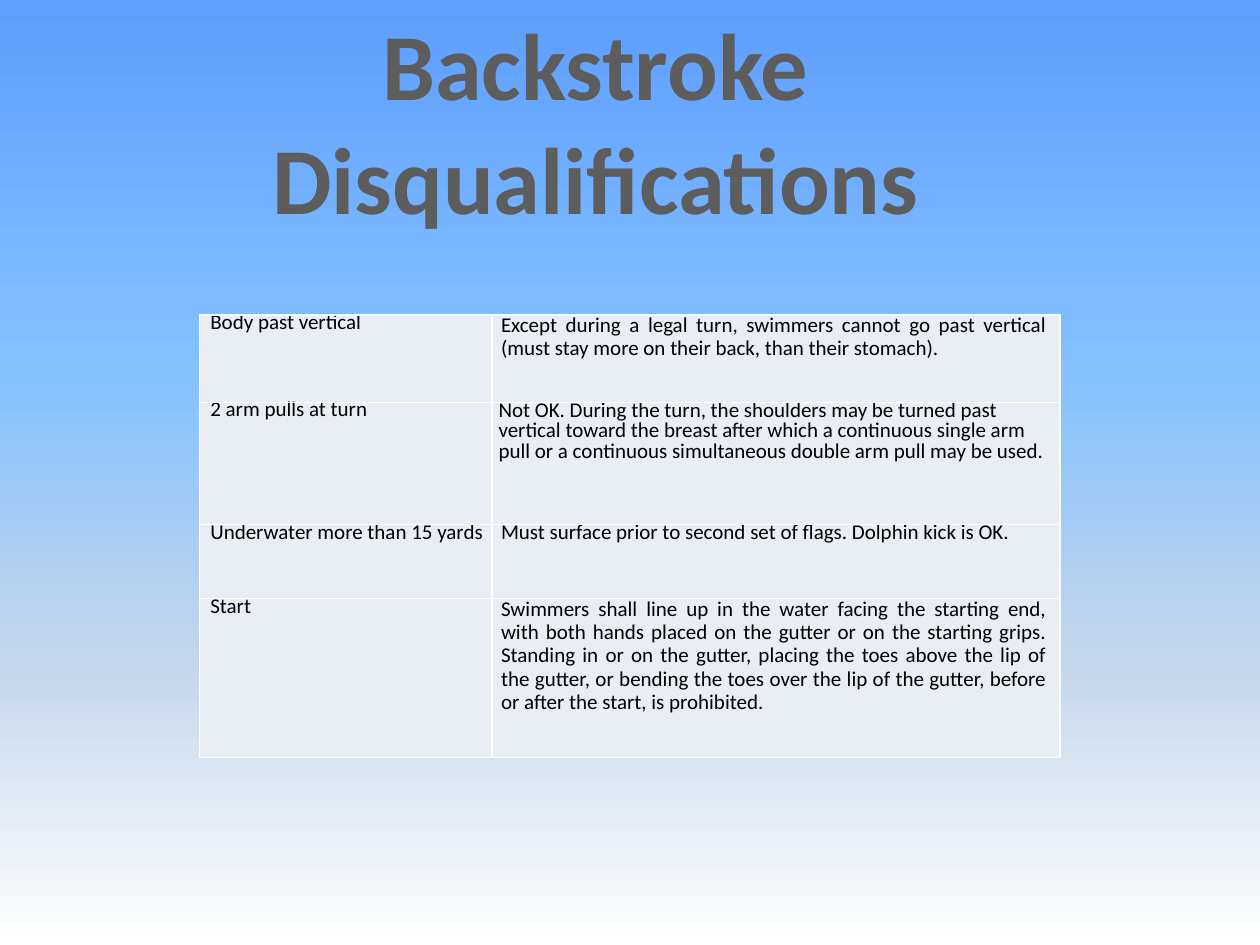
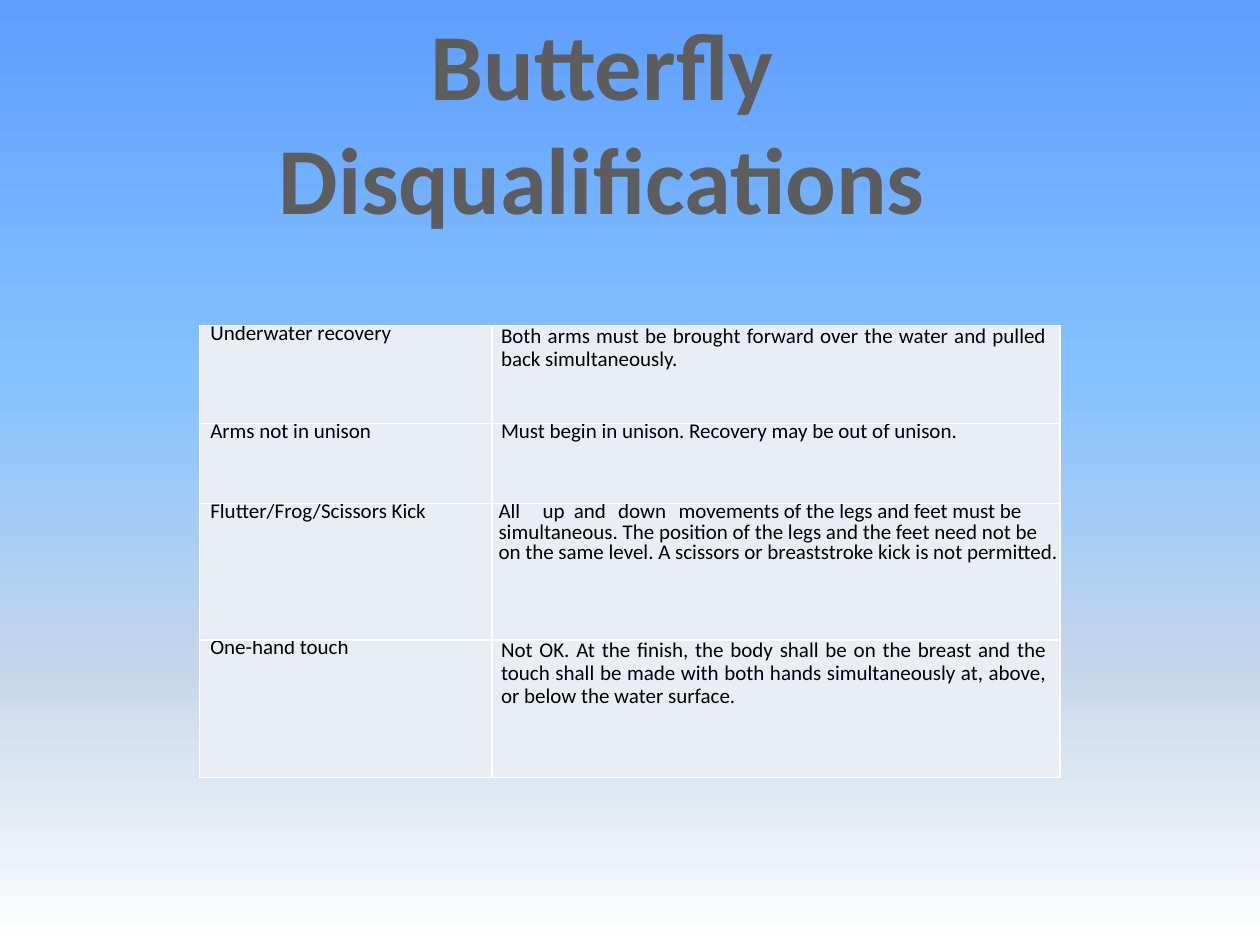
"""Build two slides of swimming stroke disqualifications."""
import dataclasses

import pptx
import pptx.dml.color
import pptx.enum.text
import pptx.oxml
import pptx.oxml.ns
import pptx.util
from pptx.util import Cm, Pt

ALIGN = pptx.enum.text.PP_ALIGN
JUSTIFIED = dict(align=ALIGN.JUSTIFY, indent=0.18)
SINGLE = dict(line=11.8, indent=0.18)
TIGHT = dict(line=11.8, indent=0.13)

STROKES = [
    dict(
        title=["Backstroke", "Disqualifications"], title_left=5.16, table_top=6.35,
        rows=[
            (1.76, "Body past vertical", dict(line=11.6, before=1.6, after=19.9),
             "Except during a legal turn, swimmers cannot go past vertical (must stay more "
             "on their back, than their stomach).",
             dict(JUSTIFIED, line=13.3, after=6.5)),
            (2.46, "2 arm pulls at turn", dict(line=11.6, after=33.4),
             "Not OK. During the turn, the shoulders may be turned past vertical toward the "
             "breast after which a continuous single arm pull or a continuous simultaneous "
             "double arm pull may be used.", TIGHT),
            (1.5, "Underwater more than 15 yards", dict(line=11.8, after=6.5),
             "Must surface prior to second set of flags. Dolphin kick is OK.",
             dict(SINGLE, after=6.7)),
            (3.2, "Start", dict(line=11.5, after=47.4),
             "Swimmers shall line up in the water facing the starting end, with both hands "
             "placed on the gutter or on the starting grips. Standing in or on the gutter, "
             "placing the toes above the lip of the gutter, or bending the toes over the lip "
             "of the gutter, before or after the start, is prohibited.",
             dict(JUSTIFIED, line=13.3, after=7)),
        ],
    ),
    dict(
        title=["Butterfly", "Disqualifications"], title_left=5.29, table_top=6.56,
        rows=[
            (1.98, "Underwater recovery", dict(line=11.6, before=1.9, after=20.1),
             "Both arms must be brought forward over the water and pulled back "
             "simultaneously.", dict(JUSTIFIED, line=13.4, after=6.7)),
            (1.61, "Arms not in unison", dict(line=11.5, after=7.1),
             "Must begin in unison. Recovery may be out of unison.",
             dict(SINGLE, after=6.9)),
            (2.75, "Flutter/Frog/Scissors Kick", dict(line=11.8, after=33.8),
             "All\tup\tand\tdown\tmovements of the legs and feet must be simultaneous. The "
             "position of the legs and the feet need not be on the same level. A scissors or "
             "breaststroke kick is not permitted.",
             dict(TIGHT, tabs=(0.89, 1.52, 2.41, 3.63))),
            (2.77, "One-hand touch", dict(line=11.5, after=34.1),
             "Not OK. At the finish, the body shall be on the breast and the touch shall be "
             "made with both hands simultaneously at, above, or below the water surface.",
             dict(JUSTIFIED, line=13.2, after=7.2)),
        ],
    ),
]


@dataclasses.dataclass(frozen=True)
class Theme:
    font: str = "Calibri"
    title_size: int = 54
    body_size: int = 12
    ink: str = "000000"
    cell: str = "E9EDF4"
    line: str = "FFFFFF"
    border_width: float = 1
    outline_width: float = 1.4
    sky: tuple = ((0, "5E9EFF"), (40, "85C2FF"), (70, "C4D6EB"), (100, "FFFFFF"))
    steel: tuple = ((0, "555555"), (49, "5D5D5D"), (50, "000000"),
                    (95, "000000"), (100, "000000"))


THEME = Theme()
SLIDE_SIZE = (25.4, 19.05)
TITLE_SIZE = (13.69, 4.88)
TABLE_LEFT = 4.02
COLUMNS = (5.9, 11.45)
FAULT_INDENT = 0.22
JUSTIFIED_RIGHT = 0.27


def element(markup):
    """Parse a DrawingML fragment."""
    head, rest = markup.split(">", 1)
    return pptx.oxml.parse_xml(f"{head} {pptx.oxml.ns.nsdecls('a')}>{rest}")


def line_element(tag, width):
    """Return a solid line in the theme's line colour."""
    return element(f'<a:{tag} w="{int(Pt(width))}"><a:solidFill>'
                   f'<a:srgbClr val="{THEME.line}"/></a:solidFill></a:{tag}>')


def set_gradient(fill, owner, stops):
    """Give a fill a downward gradient with the given stops."""
    fill.gradient()
    old = next(owner.iter(pptx.oxml.ns.qn("a:gradFill")))
    marks = "".join(f'<a:gs pos="{place * 1000}"><a:srgbClr val="{color}"/></a:gs>'
                    for place, color in stops)
    new = element(f'<a:gradFill rotWithShape="1"><a:gsLst>{marks}</a:gsLst>'
                  '<a:lin ang="5400000" scaled="0"/></a:gradFill>')
    old.getparent().replace(old, new)


def write(para, text, *, size=THEME.body_size, bold=False, align=None, indent=0,
          line=None, before=0, after=0, tabs=(), gradient=None):
    """Put formatted text into a paragraph."""
    para.alignment = align
    para.line_spacing = Pt(line) if line else None
    para.space_before, para.space_after = Pt(before), Pt(after)
    settings = para._p.get_or_add_pPr()
    settings.set("marL", str(int(Cm(indent))))
    if tabs:
        stops = "".join(f'<a:tab pos="{int(Cm(tab))}" algn="l"/>' for tab in tabs)
        settings.append(element(f"<a:tabLst>{stops}</a:tabLst>"))
    span = para.add_run()
    span.text = text
    span.font.name, span.font.size, span.font.bold = THEME.font, Pt(size), bold
    if gradient:
        set_gradient(span.font.fill, span._r, gradient)
        span._r.get_or_add_rPr().insert(0, line_element("ln", THEME.outline_width))
    else:
        span.font.color.rgb = pptx.dml.color.RGBColor.from_string(THEME.ink)


def add_title(page, lines, left):
    """Add the large centred heading."""
    box = page.shapes.add_textbox(Cm(left), 0, *map(Cm, TITLE_SIZE))
    frame = box.text_frame
    frame.word_wrap = False
    frame.auto_size = pptx.enum.text.MSO_AUTO_SIZE.SHAPE_TO_FIT_TEXT
    for index, text in enumerate(lines):
        para = frame.add_paragraph() if index else frame.paragraphs[0]
        write(para, text, size=THEME.title_size, bold=True, align=ALIGN.CENTER,
              gradient=THEME.steel)


def fill_cell(cell, text, style):
    """Write a table cell and set its fill, margins and borders."""
    cell.margin_left = cell.margin_top = cell.margin_bottom = 0
    justified = style.get("align") == ALIGN.JUSTIFY
    cell.margin_right = Cm(JUSTIFIED_RIGHT) if justified else 0
    cell.fill.solid()
    cell.fill.fore_color.rgb = pptx.dml.color.RGBColor.from_string(THEME.cell)
    for index, side in enumerate("LRTB"):
        border = line_element(f"ln{side}", THEME.border_width)
        cell._tc.get_or_add_tcPr().insert(index, border)
    write(cell.text_frame.paragraphs[0], text, **style)


def add_rules(page, rows, top):
    """Add the table of faults and rules."""
    height = sum(row[0] for row in rows)
    table = page.shapes.add_table(len(rows), len(COLUMNS), Cm(TABLE_LEFT), Cm(top),
                                  Cm(sum(COLUMNS)), Cm(height)).table
    table.first_row = table.horz_banding = False
    for column, width in zip(table.columns, COLUMNS):
        column.width = Cm(width)
    for index, (row_height, fault, fault_style, rule, rule_style) in enumerate(rows):
        table.rows[index].height = Cm(row_height)
        fill_cell(table.cell(index, 0), fault, dict(fault_style, indent=FAULT_INDENT))
        fill_cell(table.cell(index, 1), rule, rule_style)


def main():
    """Build and save the deck."""
    deck = pptx.Presentation()
    deck.slide_width, deck.slide_height = map(Cm, SLIDE_SIZE)
    for stroke in STROKES:
        page = deck.slides.add_slide(deck.slide_layouts[6])
        set_gradient(page.background.fill, page.element, THEME.sky)
        add_title(page, stroke["title"], stroke["title_left"])
        add_rules(page, stroke["rows"], stroke["table_top"])
    deck.save("out.pptx")


if __name__ == "__main__":
    main()
